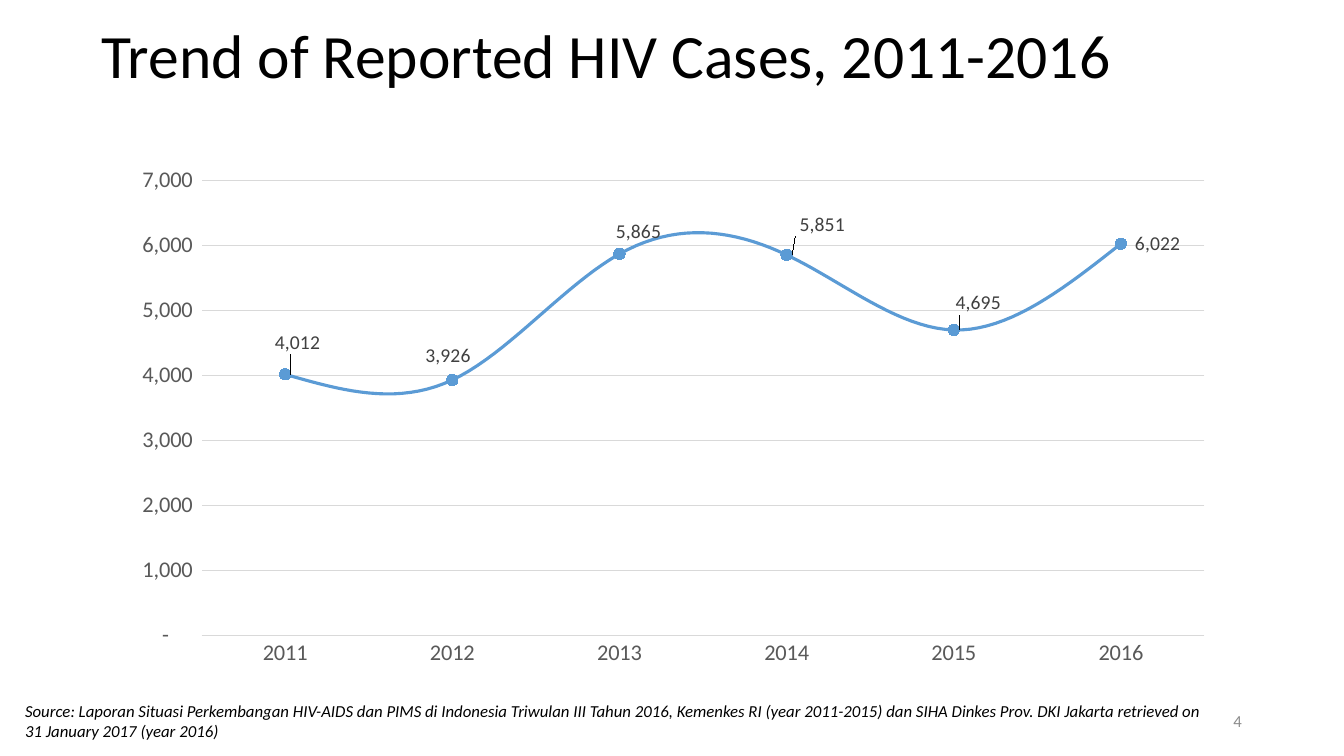
import pptx
import pptx.chart.data
import pptx.dml.color
import pptx.enum.chart
import pptx.enum.text
import pptx.oxml
import pptx.oxml.ns
import pptx.util

Pt = pptx.util.Pt
ANCHOR = pptx.enum.text.MSO_ANCHOR
ALIGN = pptx.enum.text.PP_ALIGN

FONT = "Calibri"
COLORS = {
    "text": "000000",
    "axis": "595959",
    "label": "404040",
    "grid": "D9D9D9",
    "line": "5B9BD5",
    "number": "8C8C8C",
}
NUMBER_FORMAT = '_(* #,##0_);_(* \\(#,##0\\);_(* "-"??_);_('

TITLE = "Trend of Reported HIV Cases, 2011-2016"
SOURCE = (
    "Source: Laporan Situasi Perkembangan HIV-AIDS dan PIMS di Indonesia "
    "Triwulan III Tahun 2016, Kemenkes RI (year 2011-2015) dan SIHA Dinkes "
    "Prov. DKI Jakarta retrieved on 31 January 2017 (year 2016)"
)
CASES = {"2011": 4012, "2012": 3926, "2013": 5865, "2014": 5851, "2015": 4695, "2016": 6022}
LABEL_SHIFTS = [(-24, -32), (-41, -24), (-18, -22), (-1, -30), (-12, -27)]
CHART_PIXELS = (1112, 521)
PLOT_AREA = {"x": 0.078, "y": 0.048, "w": 0.902, "h": 0.873}

TEXTS = [
    (TITLE, (65.5, 6.5, 828, 71.3), 44, "text", False, ALIGN.LEFT, ANCHOR.MIDDLE, 0.9),
    (SOURCE, (10.8, 496.8, 865.4, 37), 12, "text", True, ALIGN.LEFT, ANCHOR.TOP, 1.0),
    ("4", (678.2, 500.4, 216, 28.8), 12, "number", False, ALIGN.RIGHT, ANCHOR.MIDDLE, 1.0),
]
CHART_BOX = (82.1, 110.9, 794.2, 372.2)


def color(name):
    return pptx.dml.color.RGBColor.from_string(COLORS[name])


def style_font(font, size, name):
    font.name = FONT
    font.size = Pt(size)
    font.color.rgb = color(name)


def add_text(slide, text, box, size, name, italic, align, anchor, spacing):
    frame = slide.shapes.add_textbox(*map(Pt, box)).text_frame
    frame.word_wrap = True
    frame.vertical_anchor = anchor
    paragraph = frame.paragraphs[0]
    paragraph.text = text
    paragraph.alignment = align
    paragraph.line_spacing = spacing
    style_font(paragraph.font, size, name)
    paragraph.font.italic = italic


def chart_element(tag, **values):
    element = pptx.oxml.parse_xml(f"<c:{tag} {pptx.oxml.ns.nsdecls('c')}/>")
    for key, value in values.items():
        element.set(key, str(value))
    return element


def manual_layout(**values):
    layout = chart_element("layout")
    manual = chart_element("manualLayout")
    layout.append(manual)
    for tag, value in values.items():
        manual.append(chart_element(tag, val=value))
    return layout


def style_axis(axis):
    axis.major_tick_mark = pptx.enum.chart.XL_TICK_MARK.NONE
    axis.minor_tick_mark = pptx.enum.chart.XL_TICK_MARK.NONE
    style_font(axis.tick_labels.font, 16, "axis")


def style_line(line, name, width):
    line.color.rgb = color(name)
    line.width = Pt(width)


def add_cases_chart(slide):
    data = pptx.chart.data.CategoryChartData(number_format="General")
    data.categories = list(CASES)
    data.add_series("Series 1", list(CASES.values()))
    chart = slide.shapes.add_chart(
        pptx.enum.chart.XL_CHART_TYPE.LINE_MARKERS, *map(Pt, CHART_BOX), data
    ).chart
    chart.has_legend = False
    chart.has_title = False
    style_font(chart.font, 10, "text")

    style_axis(chart.category_axis)
    style_line(chart.category_axis.format.line, "grid", 0.75)
    values = chart.value_axis
    style_axis(values)
    values.format.line.fill.background()
    values.minimum_scale, values.maximum_scale, values.major_unit = 0, 7000, 1000
    values.tick_labels.number_format = NUMBER_FORMAT
    values.tick_labels.number_format_is_linked = False
    style_line(values.major_gridlines.format.line, "grid", 0.75)

    plot = chart.plots[0]
    plot.vary_by_categories = False
    plot_area = chart.element.chart.plotArea
    for old_layout in plot_area.findall(pptx.oxml.ns.qn("c:layout")):
        plot_area.remove(old_layout)
    plot_area.insert(
        0, manual_layout(layoutTarget="inner", xMode="edge", yMode="edge", **PLOT_AREA)
    )

    series = plot.series[0]
    series.smooth = True
    style_line(series.format.line, "line", 2.25)
    series.marker.style = pptx.enum.chart.XL_MARKER_STYLE.CIRCLE
    series.marker.size = 8
    series.marker.format.fill.solid()
    series.marker.format.fill.fore_color.rgb = color("line")
    style_line(series.marker.format.line, "line", 0.75)

    right = pptx.enum.chart.XL_LABEL_POSITION.RIGHT
    labels = series.data_labels
    labels.show_value = True
    labels.position = right
    labels.number_format = NUMBER_FORMAT
    labels.number_format_is_linked = False
    style_font(labels.font, 14, "label")
    for index, shift in enumerate(LABEL_SHIFTS):
        label = series.points[index].data_label
        label.position = right
        style_font(label.font, 14, "label")
        x, y = (round(move / size, 3) for move, size in zip(shift, CHART_PIXELS))
        label_element = labels._element.findall(pptx.oxml.ns.qn("c:dLbl"))[index]
        label_element.insert(1, manual_layout(x=x, y=y))
        label_element.insert(
            2, chart_element("numFmt", formatCode=NUMBER_FORMAT, sourceLinked=0)
        )


def main():
    presentation = pptx.Presentation()
    presentation.slide_width = Pt(960)
    presentation.slide_height = Pt(540)
    slide = presentation.slides.add_slide(presentation.slide_layouts[6])
    add_cases_chart(slide)
    for text in TEXTS:
        add_text(slide, *text)
    presentation.save("out.pptx")


if __name__ == "__main__":
    main()
